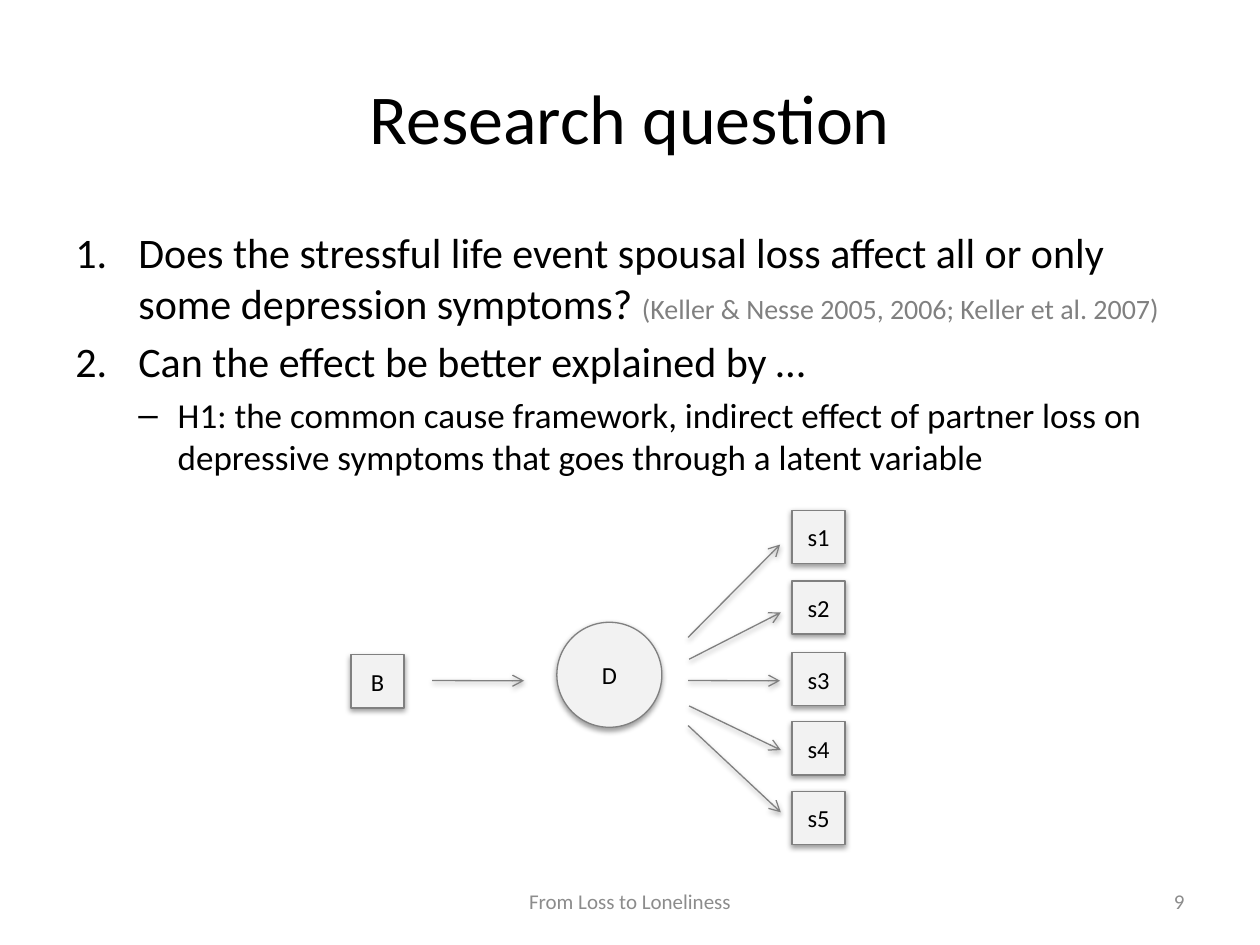
from dataclasses import dataclass

from lxml import etree
from pptx import Presentation
from pptx import util as u
from pptx.dml.color import RGBColor
from pptx.enum import shapes, text
from pptx.oxml import ns

Pt = u.Pt
FONT = "Calibri"
BLACK, GREY, FOOTER_GREY, NODE_FILL = "000000", "808080", "8C8C8C", "F2F2F2"
CENTER, RIGHT = text.PP_ALIGN.CENTER, text.PP_ALIGN.RIGHT
SQUARE, CIRCLE = shapes.MSO_SHAPE.RECTANGLE, shapes.MSO_SHAPE.OVAL
SYMPTOM_TOPS = (291.6, 332, 373, 412.5, 452.2)


@dataclass(frozen=True)
class Run:
    wording: str
    size: float
    colour: str = BLACK


@dataclass(frozen=True)
class Item:
    runs: tuple[Run, ...]
    left: float
    hanging: float
    level: int = 0
    dash: str = ""


@dataclass(frozen=True)
class Label:
    run: Run
    box: tuple[float, float, float, float]
    align: text.PP_ALIGN


@dataclass(frozen=True)
class Node:
    name: str
    left: float
    top: float
    size: float = 30.4
    outline: shapes.MSO_SHAPE = SQUARE


@dataclass(frozen=True)
class Arrow:
    start: tuple[float, float]
    end: tuple[float, float]


LABELS = (
    Label(Run("Research question", 40), (36, 21.6, 648, 90), CENTER),
    Label(Run("9", 12, FOOTER_GREY), (516, 500.5, 168, 28.75), RIGHT),
    Label(Run("From Loss to Loneliness", 12, FOOTER_GREY), (246, 500.5, 228, 28.75), CENTER),
)
ITEMS = (
    Item((
        Run("Does the stressful life event spousal loss affect all or only "
            "some depression symptoms? ", 24),
        Run("(Keller & Nesse 2005, 2006; Keller et al. 2007)", 16, GREY),
    ), 36, 36),
    Item((Run("Can the effect be better explained by …", 24),), 36, 36),
    Item((Run("H1: the common cause framework, indirect effect of partner loss on "
              "depressive symptoms that goes through a latent variable", 20),),
         58.5, 22.5, level=1, dash="–"),
)
NODES = (
    *(Node(f"s{n}", 452.6, top) for n, top in enumerate(SYMPTOM_TOPS, 1)),
    Node("D", 318.2, 355.6, 60, CIRCLE),
    Node("B", 200.6, 374.2),
)
ARROWS = (
    Arrow((247, 388.9), (299.5, 389)),
    Arrow((393.2, 364.2), (445.8, 311.2)),
    Arrow((393.8, 376.7), (446.2, 350)),
    Arrow((393.2, 388.9), (445.8, 389)),
    Arrow((393.8, 403.4), (446.2, 428.6)),
    Arrow((393.2, 414.6), (446.2, 464.2)),
)


def colour(hex_code: str) -> RGBColor:
    return RGBColor.from_string(hex_code)


def apply(target, formats: dict) -> None:
    for attribute, value in formats.items():
        setattr(target, attribute, value)


def child(parent, tag: str, **attributes):
    """Append a DrawingML element to its parent."""
    return etree.SubElement(parent, ns.qn(f"a:{tag}"), attributes)


def add_run(paragraph, run: Run) -> None:
    piece = paragraph.add_run()
    piece.text = run.wording
    apply(piece.font, {"name": FONT, "size": Pt(run.size)})
    piece.font.color.rgb = colour(run.colour)


def add_frame(slide, box: tuple[float, float, float, float], anchor):
    frame = slide.shapes.add_textbox(*map(Pt, box)).text_frame
    apply(frame, {"word_wrap": True, "vertical_anchor": anchor})
    return frame


def add_label(slide, label: Label) -> None:
    frame = add_frame(slide, label.box, text.MSO_ANCHOR.MIDDLE)
    paragraph = frame.paragraphs[0]
    paragraph.alignment = label.align
    add_run(paragraph, label.run)


def add_question(slide, items: tuple[Item, ...]) -> None:
    frame = add_frame(slide, (36, 126, 648, 356.4), text.MSO_ANCHOR.TOP)
    for index, item in enumerate(items):
        paragraph = frame.add_paragraph() if index else frame.paragraphs[0]
        apply(paragraph, {"level": item.level,
                          "space_before": Pt(item.runs[0].size * 0.2)})
        properties = paragraph._p.get_or_add_pPr()
        properties.set("marL", str(Pt(item.left)))
        properties.set("indent", str(-Pt(item.hanging)))
        if item.dash:
            child(properties, "buFont", typeface="Arial")
            child(properties, "buChar", char=item.dash)
        else:
            child(properties, "buFont", typeface="+mj-lt")
            child(properties, "buAutoNum", type="arabicPeriod")
        for run in item.runs:
            add_run(paragraph, run)


def style_outline(shape) -> None:
    """Give a node or arrow its thin grey line and soft shadow."""
    shape.line.color.rgb = colour(GREY)
    shape.line.width = Pt(0.75)
    effects = child(shape._element.spPr, "effectLst")
    shadow = child(effects, "outerShdw", blurRad=str(Pt(3.1)), dist=str(Pt(1.6)),
                   dir="5400000", rotWithShape="0")
    child(child(shadow, "srgbClr", val=BLACK), "alpha", val="38000")


def add_node(slide, node: Node) -> None:
    shape = slide.shapes.add_shape(
        node.outline, *map(Pt, (node.left, node.top, node.size, node.size)))
    shape.fill.solid()
    shape.fill.fore_color.rgb = colour(NODE_FILL)
    style_outline(shape)
    frame = shape.text_frame
    apply(frame, {"margin_left": 0, "margin_right": 0, "word_wrap": True,
                  "vertical_anchor": text.MSO_ANCHOR.MIDDLE})
    paragraph = frame.paragraphs[0]
    paragraph.alignment = CENTER
    add_run(paragraph, Run(node.name, 14))


def add_arrow(slide, arrow: Arrow) -> None:
    connector = slide.shapes.add_connector(
        shapes.MSO_CONNECTOR.STRAIGHT, *map(Pt, arrow.start + arrow.end))
    style_outline(connector)
    child(connector.line._get_or_add_ln(), "tailEnd", type="arrow")


def main() -> None:
    deck = Presentation()
    apply(deck, {"slide_width": Pt(720), "slide_height": Pt(540)})
    slide = deck.slides.add_slide(deck.slide_layouts[6])
    for label in LABELS:
        add_label(slide, label)
    add_question(slide, ITEMS)
    for node in NODES:
        add_node(slide, node)
    for arrow in ARROWS:
        add_arrow(slide, arrow)
    deck.save("out.pptx")


if __name__ == "__main__":
    main()
